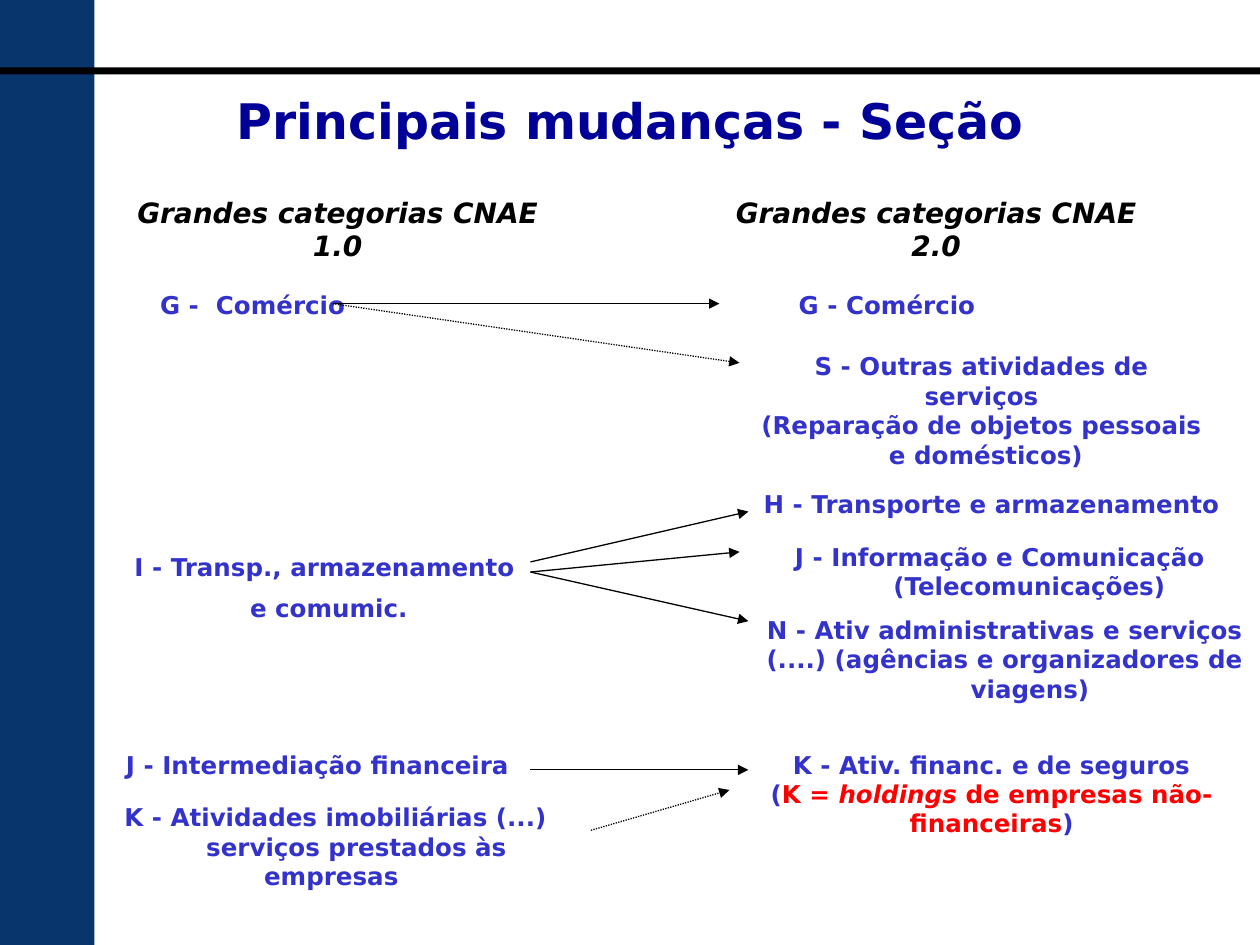
from pptx import Presentation
from pptx.util import Inches, Pt
from pptx.dml.color import RGBColor
from pptx.enum.dml import MSO_LINE_DASH_STYLE as Dash
from pptx.enum.shapes import MSO_CONNECTOR as Connector, MSO_SHAPE as Shape
from pptx.enum.text import MSO_ANCHOR as Anchor, PP_ALIGN as Align
from pptx.oxml.ns import qn
from lxml.etree import SubElement

NAVY, TITLE, BLUE, RED, BLACK = "09356D", "000099", "3333CC", "FF0000", "000000"


def color(value):
    return RGBColor.from_string(value)


class SlideBuilder:
    """Style and current slide; lengths are in cells of a 100 x 75 grid."""
    font = "DejaVu Sans"

    def __init__(self, deck):
        self.slide = deck.slides.add_slide(deck.slide_layouts[6])
        self.column = deck.slide_width / 100
        self.row = deck.slide_height / 75

    def place(self, x, y):
        return round(x * self.column), round(y * self.row)

    def bar(self, left, top, width, height, fill):
        bar = self.slide.shapes.add_shape(
            Shape.RECTANGLE, *self.place(left, top), *self.place(width, height))
        bar.shadow.inherit = False
        bar.fill.solid()
        bar.fill.fore_color.rgb = color(fill)
        bar.line.fill.background()

    def text(self, left, top, width, height, *paragraphs,
             size=14, fill=BLUE, italic=False, gap=0, indents=()):
        """A paragraph is a string, or a list of (text, colour, italic) runs."""
        box = self.slide.shapes.add_textbox(
            *self.place(left, top), *self.place(width, height))
        frame = box.text_frame
        frame.word_wrap = True
        frame.vertical_anchor = Anchor.TOP
        for index, content in enumerate(paragraphs):
            para = frame.add_paragraph() if index else frame.paragraphs[0]
            para.alignment = Align.CENTER
            if index and gap:
                para.space_before = Pt(gap)
            if index < len(indents) and indents[index]:
                para._p.get_or_add_pPr().set("indent", str(Inches(indents[index])))
            runs = [(content, fill, italic)] if isinstance(content, str) else content
            for words, run_fill, slanted in runs:
                span = para.add_run()
                span.text = words
                span.font.name = self.font
                span.font.size = Pt(size)
                span.font.bold = True
                span.font.italic = slanted
                span.font.color.rgb = color(run_fill)

    def arrow(self, start, end, dotted=False):
        arrow = self.slide.shapes.add_connector(
            Connector.STRAIGHT, *self.place(*start), *self.place(*end))
        arrow.line.width = Pt(0.75)
        arrow.line.color.rgb = color(BLACK)
        if dotted:
            arrow.line.dash_style = Dash.ROUND_DOT
        properties = arrow._element.spPr
        SubElement(properties.find(qn("a:ln")), qn("a:tailEnd"), type="triangle")
        SubElement(properties, qn("a:effectLst"))


def main():
    deck = Presentation()
    deck.slide_width, deck.slide_height = Inches(10), Inches(7.5)
    page = SlideBuilder(deck)

    # Side band, rule and title
    page.bar(0, 0, 7.5, 75, NAVY)
    page.bar(0, 5.35, 100, 0.55, BLACK)
    page.text(15, 6.7, 70, 5.7, "Principais mudanças - Seção", size=28, fill=TITLE)

    # Column headings
    for left, version in ((9.3, "1.0"), (56.8, "2.0")):
        page.text(left, 15, 35, 6, f"Grandes categorias CNAE {version}",
                  size=16, fill=BLACK, italic=True)

    # Old categories
    page.text(10, 22.5, 20.1, 3.2, "G -  Comércio")
    page.text(9.2, 43.3, 33.8, 6.6, "I - Transp., armazenamento ", "e comumic.", gap=7)
    page.text(8.7, 59, 33, 3.3, "J - Intermediação financeira")
    page.text(7.8, 63.2, 37, 8, "K - Atividades imobiliárias (...)",
              "serviços prestados às empresas", indents=(0.07, 0.4))

    # New categories
    page.text(59.4, 22.5, 22, 3.2, "G - Comércio")
    page.text(59, 27.4, 37.8, 10.4, "S - Outras atividades de serviços",
              "(Reparação de objetos pessoais", "e domésticos)", indents=(0, 0, 0.07))
    page.text(59.4, 38.3, 38.6, 3.2, "H - Transporte e armazenamento")
    page.text(59.4, 42.5, 40.6, 5.7, "J - Informação e Comunicação ",
              "(Telecomunicações)", indents=(0, 0.4))
    page.text(59.1, 48.3, 41.3, 8,
              "N - Ativ administrativas e serviços (....) (agências e organizadores de",
              "viagens)", indents=(0, 0.4))
    page.text(59.4, 59, 38.6, 8.1, "K - Ativ. financ. e de seguros",
              [("(", BLUE, False), ("K = ", RED, False), ("holdings", RED, True),
               (" de empresas não-financeiras", RED, False), (")", BLUE, False)])

    # Arrows from old to new categories
    trade, transport = (26.4, 24.1), (42.1, 45.4)
    page.arrow(trade, (57.1, 24.1))
    page.arrow(trade, (58.7, 28.8), dotted=True)
    page.arrow((42.1, 44.6), (59.4, 40.6))
    page.arrow(transport, (58.7, 43.8))
    page.arrow(transport, (59.4, 49.3))
    page.arrow((42.1, 61.1), (59.4, 61.1))
    page.arrow((46.9, 65.9), (57.9, 62.7), dotted=True)

    deck.save("out.pptx")


if __name__ == "__main__":
    main()
